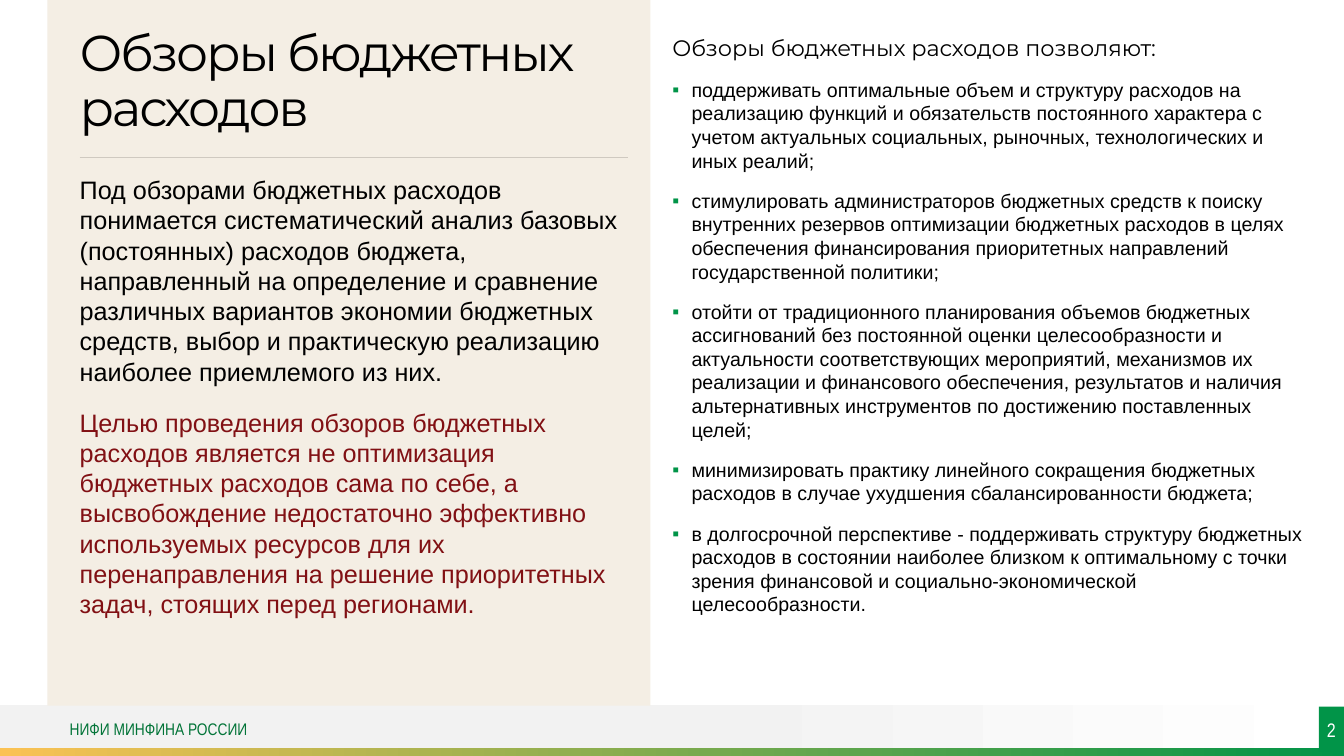
from lxml import etree
from pptx import Presentation
from pptx.dml.color import RGBColor
from pptx.enum.shapes import MSO_CONNECTOR, MSO_SHAPE
from pptx.enum.text import MSO_ANCHOR, MSO_AUTO_SIZE, PP_ALIGN
from pptx.oxml.ns import qn
from pptx.util import Pt

PX = 9144  # 100 px to the inch
RECT = MSO_SHAPE.RECTANGLE
LEFT, CENTER = PP_ALIGN.LEFT, PP_ALIGN.CENTER
TOP, MIDDLE, BOTTOM = MSO_ANCHOR.TOP, MSO_ANCHOR.MIDDLE, MSO_ANCHOR.BOTTOM

COLORS = {
    "black": "000000",
    "white": "FFFFFF",
    "grey": "F2F2F2",
    "beige": "F4EEE4",
    "rule": "CFC9C0",
    "yellow": "FBC254",
    "green": "019448",
    "dark_green": "027438",
    "red": "811014",
}
RGB = {name: RGBColor.from_string(value) for name, value in COLORS.items()}

DEFINITION = [
    ("Под обзорами бюджетных расходов понимается систематический анализ базовых "
     "(постоянных) расходов бюджета, направленный на определение и сравнение "
     "различных вариантов экономии бюджетных средств, выбор и практическую "
     "реализацию наиболее приемлемого из них.", "black"),
    ("Целью проведения обзоров бюджетных расходов является не оптимизация "
     "бюджетных расходов сама по себе, а высвобождение недостаточно эффективно "
     "используемых ресурсов для их перенаправления на решение приоритетных "
     "задач, стоящих перед регионами.", "red"),
]
BENEFITS = [
    "поддерживать оптимальные объем и структуру расходов на реализацию функций и "
    "обязательств постоянного характера с учетом актуальных социальных, рыночных, "
    "технологических и иных реалий;",
    "стимулировать администраторов бюджетных средств к поиску внутренних резервов "
    "оптимизации бюджетных расходов в целях обеспечения финансирования "
    "приоритетных направлений государственной политики;",
    "отойти от традиционного планирования объемов бюджетных ассигнований без "
    "постоянной оценки целесообразности и актуальности соответствующих "
    "мероприятий, механизмов их реализации и финансового обеспечения, результатов "
    "и наличия альтернативных инструментов по достижению поставленных целей;",
    "минимизировать практику линейного сокращения бюджетных расходов в случае "
    "ухудшения сбалансированности бюджета;",
    "в долгосрочной перспективе - поддерживать структуру бюджетных расходов в "
    "состоянии наиболее близком к оптимальному с точки зрения финансовой и "
    "социально-экономической целесообразности.",
]


def set_frame(sp, box, anchor, inset=(0, 0)):
    """Place a shape and return its text frame; inset is horizontal, vertical."""
    sp.left, sp.top, sp.width, sp.height = [v * PX for v in box]
    tf = sp.text_frame
    tf.word_wrap = True
    tf.auto_size = MSO_AUTO_SIZE.NONE
    tf.vertical_anchor = anchor
    tf.margin_left = tf.margin_right = inset[0] * PX
    tf.margin_top = tf.margin_bottom = inset[1] * PX
    return tf


def add_text(p, text, size, font, color, align=LEFT, spacing=1.0,
             before=0, after=0, bullet=None, indent=0):
    pPr = p._p.get_or_add_pPr()
    pPr.set("marL", str(indent * PX))
    pPr.set("indent", str(-indent * PX))
    if bullet:
        clr = etree.SubElement(pPr, qn("a:buClr"))
        etree.SubElement(clr, qn("a:srgbClr"), val=COLORS["green"])
        etree.SubElement(pPr, qn("a:buFont"), typeface="Arial")
        etree.SubElement(pPr, qn("a:buChar"), char=bullet)
    else:
        etree.SubElement(pPr, qn("a:buNone"))
    p.alignment = align
    p.line_spacing = spacing
    p.space_before, p.space_after = Pt(before), Pt(after)
    r = p.add_run()
    r.text = text
    r.font.size, r.font.name = Pt(size), font
    r.font.color.rgb = RGB[color]
    return r


prs = Presentation()
prs.slide_width, prs.slide_height = 1333 * PX, 750 * PX
s = prs.slides.add_slide(prs.slide_layouts[1])
title, body = s.placeholders

# Bands, left panel and page number tab: box, gradient stops or one plain colour
panels = [
    ((0, 699, 1333, 46), [(0.53, "grey"), (1, "white")]),
    ((0, 742, 1333, 8), [(0, "yellow"), (1, "green")]),
    ((47, 0, 598, 700), [(0, "beige")]),
    ((1308, 701, 25, 45), [(0, "green")]),
]
for box, stops in panels:
    sp = s.shapes.add_shape(RECT, *[v * PX for v in box])
    sp.shadow.inherit = False
    sp.line.fill.background()
    if len(stops) == 1:
        sp.fill.solid()
        sp.fill.fore_color.rgb = RGB[stops[0][1]]
    else:
        sp.fill.gradient()
        sp.fill.gradient_angle = 0
        for stop, (position, color) in zip(sp.fill.gradient_stops, stops):
            stop.position = position
            stop.color.rgb = RGB[color]

# The last panel carries the page number
tf = set_frame(sp, box, MIDDLE)
add_text(tf.paragraphs[0], "2", 14, "Arial Narrow", "white", CENTER)

# Footer
footer = s.shapes.add_textbox(0, 0, PX, PX)
tf = set_frame(footer, (69, 701, 461, 45), MIDDLE)
add_text(tf.paragraphs[0], "НИФИ МИНФИНА РОССИИ", 12, "Arial Narrow", "dark_green")

# Title and definition, brought in front of the panel
for placeholder in (title, body):
    s.shapes.element.append(placeholder.element)

tf = set_frame(title, (79, 13, 544, 123), BOTTOM)
r = add_text(tf.paragraphs[0], "Обзоры бюджетных расходов", 36, "Montserrat",
             "black", spacing=0.9)
r.font._element.set("spc", "-150")

rule = s.shapes.add_connector(MSO_CONNECTOR.STRAIGHT,
                              79 * PX, 156 * PX, 623 * PX, 156 * PX)
rule.line.color.rgb = RGB["rule"]
rule.line.width = Pt(0.5)
etree.SubElement(rule._element.spPr, qn("a:effectLst"))

tf = set_frame(body, (79, 173, 544, 494), TOP)
for i, (text, color) in enumerate(DEFINITION):
    p = tf.add_paragraph() if i else tf.paragraphs[0]
    add_text(p, text, 18, "Arial", color, before=10 if i else 0, after=5)

# Benefits
benefits = s.shapes.add_textbox(0, 0, PX, PX)
tf = set_frame(benefits, (657, 29, 652, 670), TOP, (10, 5))
add_text(tf.paragraphs[0], "Обзоры бюджетных расходов позволяют:", 16,
         "Montserrat", "black", after=6)
for text in BENEFITS:
    add_text(tf.add_paragraph(), text, 14, "Arial", "black",
             before=6, after=6, bullet="▪", indent=19)

prs.save("out.pptx")
